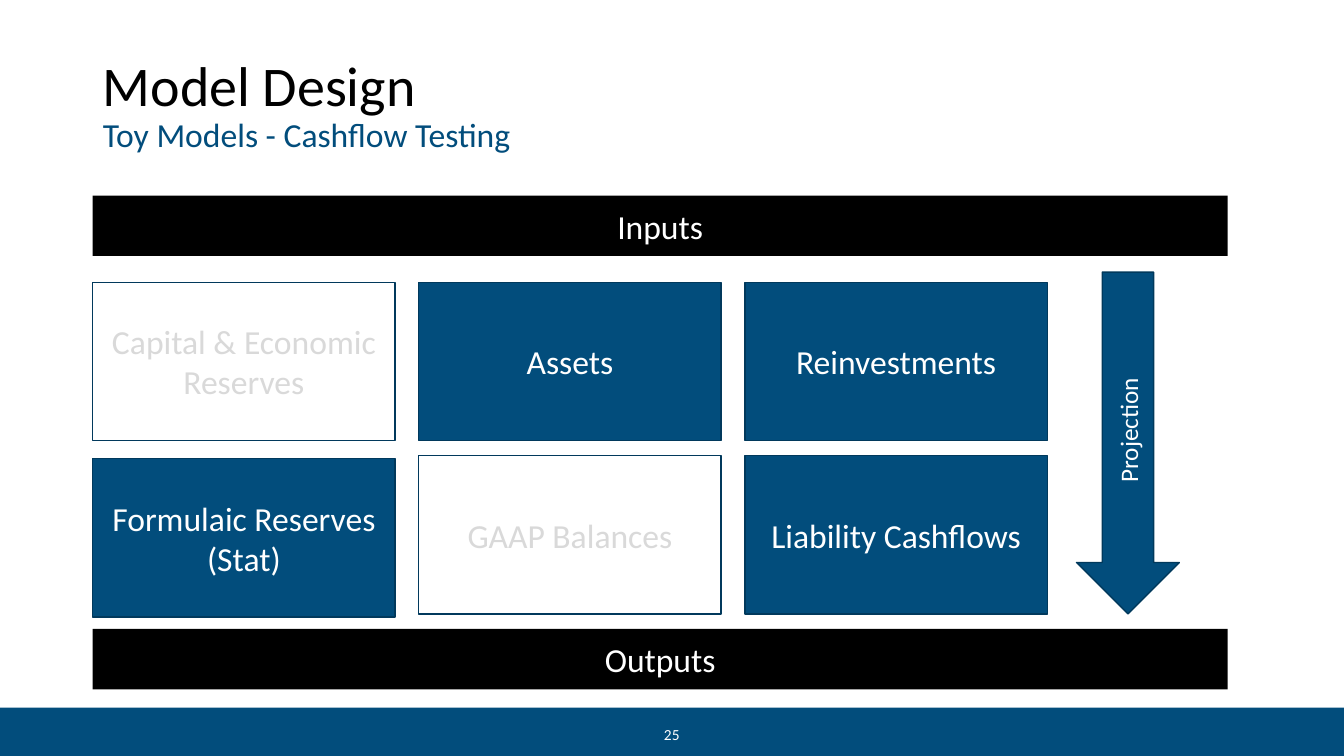
from dataclasses import dataclass

from lxml import etree
from pptx import Presentation
from pptx.dml.color import RGBColor
from pptx.enum import shapes, text
from pptx.oxml.ns import qn
from pptx.util import Pt


@dataclass(frozen=True)
class Theme:
    font: str = "Calibri"
    blue: str = "024D7C"
    outline: str = "01395C"
    black: str = "000000"
    white: str = "FFFFFF"
    muted: str = "D9D9D9"
    title_size: int = 40
    body_size: int = 24
    arrow_size: int = 18
    number_size: int = 11


THEME = Theme()

# Shared layout, in points
LEFT = 66.24
MODULE_W, MODULE_H = 216, 113.04
COLUMN_STEP = 232.92
ROW_TOPS = (201.6, 325.44)
STAT_DROP = 2.16
BAR_W, BAR_H = 810.72, 43.2

# Name and whether the module is in use, row by row
MODULES = (
    (("Capital & Economic Reserves", False), ("Assets", True), ("Reinvestments", True)),
    (("Formulaic Reserves (Stat)", True), ("GAAP Balances", False), ("Liability Cashflows", True)),
)


def set_values(target, values):
    for name, value in values.items():
        setattr(target, name, value)


def place(shape, left, top, width, height):
    set_values(shape, {"left": Pt(left), "top": Pt(top), "width": Pt(width), "height": Pt(height)})


def style_font(font, size, color):
    set_values(font, {"name": THEME.font, "size": Pt(size)})
    font.color.rgb = RGBColor.from_string(color)


def write_label(shape, label, size, color):
    frame = shape.text_frame
    set_values(frame, {"word_wrap": True, "vertical_anchor": text.MSO_ANCHOR.MIDDLE})
    paragraph = frame.paragraphs[0]
    paragraph.alignment = text.PP_ALIGN.CENTER
    run = paragraph.add_run()
    run.text = label
    style_font(run.font, size, color)


def add_block(slide, box, fill, outline=None, kind=shapes.MSO_SHAPE.RECTANGLE):
    block = slide.shapes.add_shape(kind, *map(Pt, box))
    block.shadow.inherit = False
    block.fill.solid()
    block.fill.fore_color.rgb = RGBColor.from_string(fill)
    if outline:
        block.line.color.rgb = RGBColor.from_string(outline)
        block.line.width = Pt(1)
    else:
        block.line.fill.background()
    return block


def add_title(slide, heading, subheading):
    title = slide.shapes.title
    place(title, LEFT, 25.92, 828, 100.8)
    set_values(title.text_frame, {
        "word_wrap": True,
        "auto_size": text.MSO_AUTO_SIZE.NONE,
        "vertical_anchor": text.MSO_ANCHOR.MIDDLE,
    })
    paragraph = title.text_frame.paragraphs[0]
    set_values(paragraph, {"alignment": text.PP_ALIGN.LEFT, "line_spacing": 0.9})
    heading_run = paragraph.add_run()
    heading_run.text = heading
    style_font(heading_run.font, THEME.title_size, THEME.black)
    # The line break takes the heading size so it does not stretch the line
    paragraph.add_line_break()
    line_break = paragraph._p.find(qn("a:br"))
    etree.SubElement(line_break, qn("a:rPr")).set("sz", str(THEME.title_size * 100))
    subheading_run = paragraph.add_run()
    subheading_run.text = subheading
    style_font(subheading_run.font, THEME.body_size, THEME.blue)


def add_footer(slide, number):
    add_block(slide, (0, 505.44, 960, 34.56), THEME.blue)
    page_number = slide.shapes.add_textbox(*map(Pt, (454.32, 516.24, 51.12, 15.84)))
    write_label(page_number, number, THEME.number_size, THEME.white)


def add_bar(slide, label, top):
    bar = add_block(slide, (LEFT, top, BAR_W, BAR_H), THEME.black)
    write_label(bar, label, THEME.body_size, THEME.white)


def add_module(slide, label, active, left, top):
    fill, ink = (THEME.blue, THEME.white) if active else (THEME.white, THEME.muted)
    module = add_block(slide, (left, top, MODULE_W, MODULE_H), fill, THEME.outline)
    write_label(module, label, THEME.body_size, ink)


def add_projection_arrow(slide):
    # Turned upside down so that the vertical label reads upwards
    arrow = add_block(slide, (768.96, 194.4, 73.44, 244.08), THEME.blue, THEME.outline,
                      shapes.MSO_SHAPE.UP_ARROW)
    arrow.rotation = 180
    write_label(arrow, "Projection", THEME.arrow_size, THEME.white)
    arrow._element.txBody.find(qn("a:bodyPr")).set("vert", "vert")


def main():
    prs = Presentation()
    set_values(prs, {"slide_width": Pt(960), "slide_height": Pt(540)})
    slide = prs.slides.add_slide(prs.slide_layouts[5])

    # Heading and footer
    add_title(slide, "Model Design", "Toy Models - Cashflow Testing")
    add_footer(slide, "25")

    # Inputs, modules, outputs
    add_bar(slide, "Inputs", 139.68)
    for row, (top, modules) in enumerate(zip(ROW_TOPS, MODULES)):
        for column, (label, active) in enumerate(modules):
            drop = STAT_DROP if (row, column) == (1, 0) else 0
            add_module(slide, label, active, LEFT + column * COLUMN_STEP, top + drop)
    add_bar(slide, "Outputs", 449.28)

    # Direction of the projection
    add_projection_arrow(slide)
    prs.save("out.pptx")


if __name__ == "__main__":
    main()
